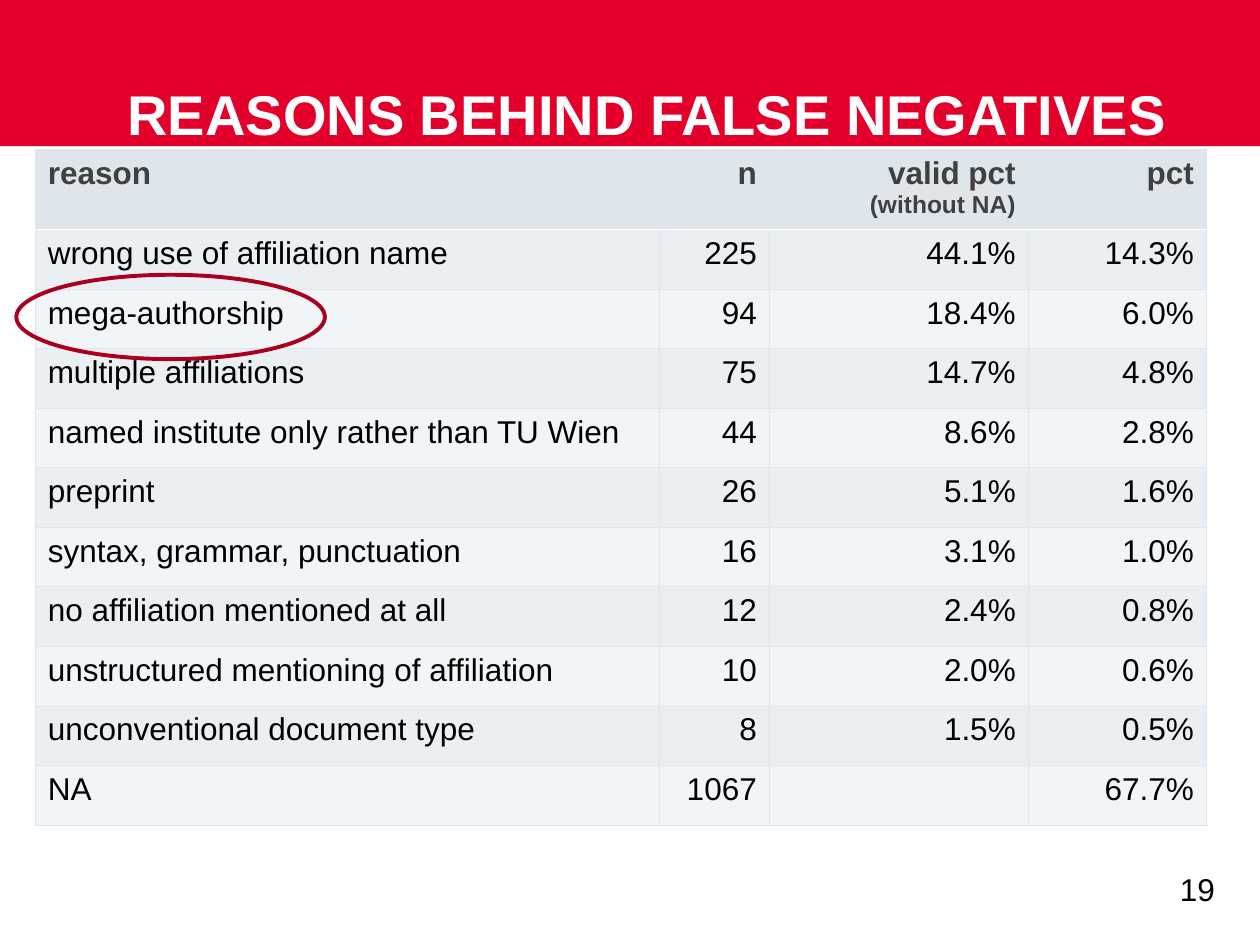
import pptx
import pptx.dml.color
import pptx.enum.shapes
import pptx.enum.text
import pptx.oxml
import pptx.oxml.ns
import pptx.util

Cm = pptx.util.Cm
Pt = pptx.util.Pt
SHAPES = pptx.enum.shapes.MSO_SHAPE
ALIGN = pptx.enum.text.PP_ALIGN
COLORS = {
    "band": "E3002B", "white": "FFFFFF", "black": "000000",
    "header": "DEE6EC", "header_text": "404040",
    "odd": "EAEFF3", "even": "F2F5F7", "marker": "AA0020",
}


def style(para, size, color, bold=False, align=ALIGN.LEFT):
    para.alignment = align
    for span in para.runs:
        span.font.name = "Arial"
        span.font.size = Pt(size)
        span.font.bold = bold
        span.font.color.rgb = pptx.dml.color.RGBColor.from_string(COLORS[color])


def add_border(cell, side, color, width):
    cell._tc.get_or_add_tcPr().append(pptx.oxml.parse_xml(
        f'<a:ln{side} {pptx.oxml.ns.nsdecls("a")} w="{Pt(width)}"><a:solidFill>'
        f'<a:srgbClr val="{COLORS[color]}"/></a:solidFill></a:ln{side}>'))


deck = pptx.Presentation()
deck.slide_width, deck.slide_height = Cm(25.4), Cm(19.05)
page = deck.slides.add_slide(deck.slide_layouts[6])

# Red title band
band = page.shapes.add_shape(SHAPES.RECTANGLE, 0, 0, deck.slide_width, Cm(2.95))
band.shadow.inherit = False
band.fill.solid()
band.fill.fore_color.rgb = pptx.dml.color.RGBColor.from_string(COLORS["band"])
band.line.fill.background()

# Title
title = page.shapes.add_textbox(Cm(2.57), Cm(0.69), Cm(22.17), Cm(2.26))
frame = title.text_frame
frame.word_wrap = True
frame.vertical_anchor = pptx.enum.text.MSO_ANCHOR.BOTTOM
frame.margin_left = frame.margin_right = frame.margin_top = frame.margin_bottom = 0
frame.text = "REASONS BEHIND FALSE NEGATIVES"
frame.paragraphs[0].line_spacing = Pt(32)
style(frame.paragraphs[0], 32, "white", bold=True)

# Page number
number = page.shapes.add_textbox(Cm(21.79), Cm(17.42), Cm(2.95), Cm(1.65))
number.text_frame.word_wrap = True
number.text_frame.text = "19"
style(number.text_frame.paragraphs[0], 18, "black", align=ALIGN.RIGHT)

# Table of reasons
rows = [
    ("reason", "n", "valid pct\n(without NA)", "pct"),
    ("wrong use of affiliation name", "225", "44.1%", "14.3%"),
    ("mega-authorship", "94", "18.4%", "6.0%"),
    ("multiple affiliations", "75", "14.7%", "4.8%"),
    ("named institute only rather than TU Wien", "44", "8.6%", "2.8%"),
    ("preprint", "26", "5.1%", "1.6%"),
    ("syntax, grammar, punctuation", "16", "3.1%", "1.0%"),
    ("no affiliation mentioned at all", "12", "2.4%", "0.8%"),
    ("unstructured mentioning of affiliation", "10", "2.0%", "0.6%"),
    ("unconventional document type", "8", "1.5%", "0.5%"),
    ("NA", "1067", "", "67.7%"),
]
widths = [12.58, 2.22, 5.22, 3.59]
heights = [1.57] + [1.2] * (len(rows) - 1)
table = page.shapes.add_table(len(rows), len(widths), Cm(0.71), Cm(3.02),
                              Cm(sum(widths)), Cm(sum(heights))).table
for column, width in zip(table.columns, widths):
    column.width = Cm(width)
for row, height in zip(table.rows, heights):
    row.height = Cm(height)

for r, values in enumerate(rows):
    header = r == 0
    fill = "header" if header else "odd" if r % 2 else "even"
    for c, value in enumerate(values):
        cell = table.cell(r, c)
        for side in "LRTB":
            if (header and side == "B") or (r == 1 and side == "T"):
                add_border(cell, side, "white", 1)
            else:
                add_border(cell, side, "header", 0.5)
        cell.fill.solid()
        cell.fill.fore_color.rgb = pptx.dml.color.RGBColor.from_string(COLORS[fill])
        cell.text_frame.text = value
        for line, para in enumerate(cell.text_frame.paragraphs):
            style(para, 14 if line else 18, "header_text" if header else "black",
                  bold=header, align=ALIGN.RIGHT if c else ALIGN.LEFT)

# Ellipse around mega-authorship
marker = page.shapes.add_shape(SHAPES.OVAL, Cm(0.33), Cm(5.54), Cm(6.22), Cm(1.7))
marker.shadow.inherit = False
marker.fill.background()
marker.line.color.rgb = pptx.dml.color.RGBColor.from_string(COLORS["marker"])
marker.line.width = Pt(2.25)

deck.save("out.pptx")
